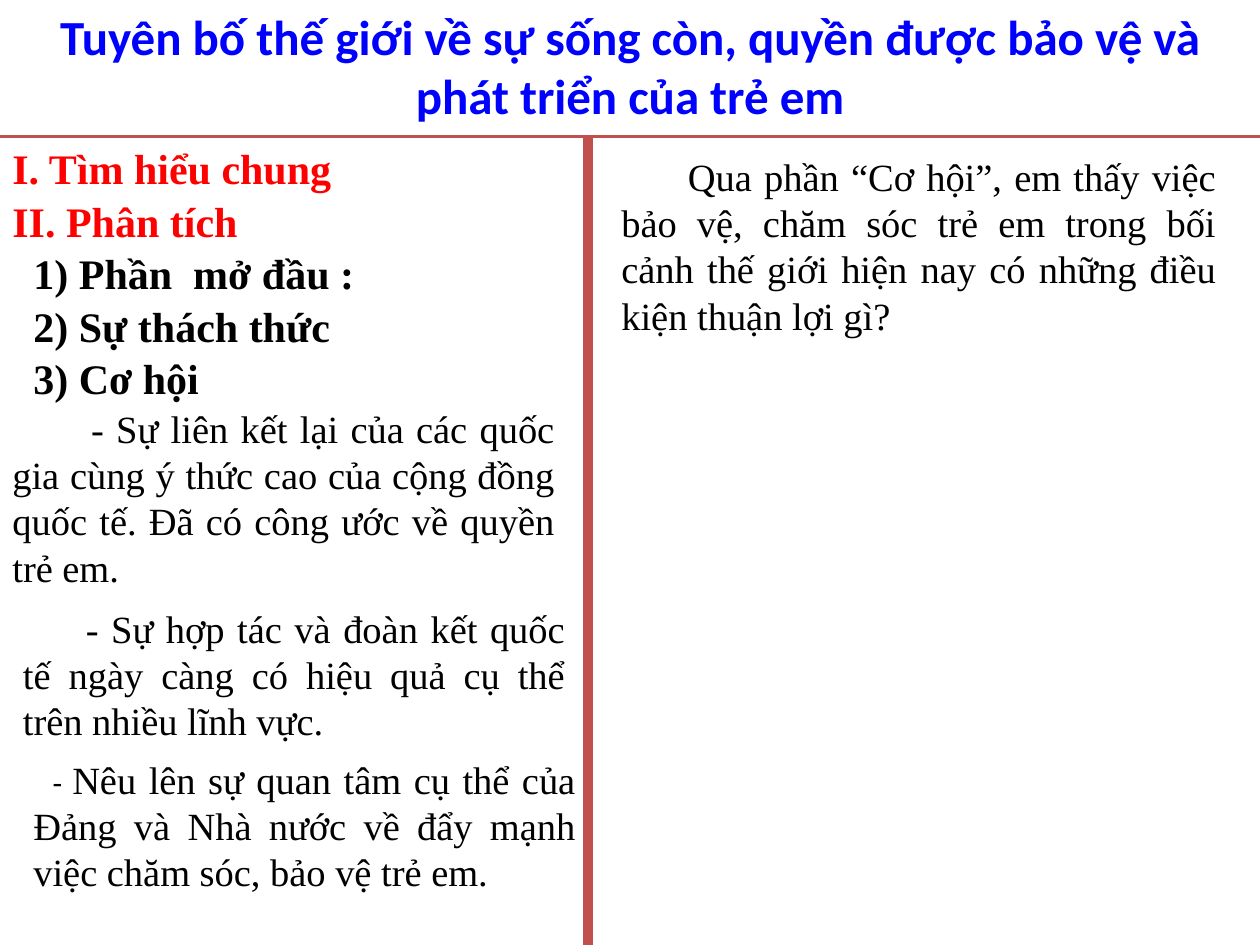
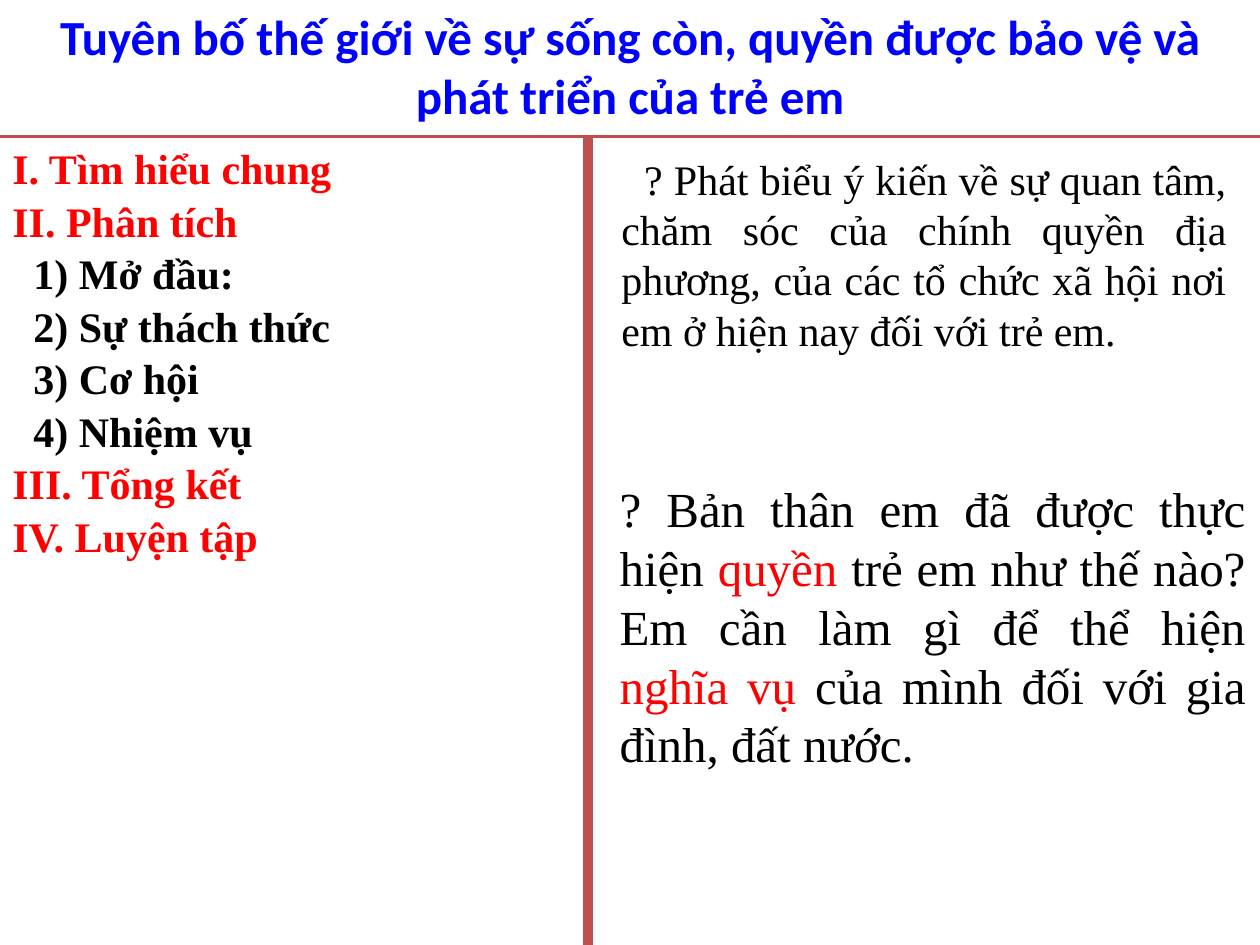
"""Build two lesson slides on the world declaration about children's rights."""
from lxml import etree
from pptx import Presentation
from pptx.dml.color import RGBColor
from pptx.enum.shapes import MSO_CONNECTOR
from pptx.enum.text import MSO_ANCHOR, MSO_AUTO_SIZE, PP_ALIGN
from pptx.oxml.ns import qn
from pptx.util import Pt

STRAIGHT = MSO_CONNECTOR.STRAIGHT
TOP = MSO_ANCHOR.TOP
NO_FIT, GROW = MSO_AUTO_SIZE.NONE, MSO_AUTO_SIZE.SHAPE_TO_FIT_TEXT
LEFT, CENTER, JUSTIFY = PP_ALIGN.LEFT, PP_ALIGN.CENTER, PP_ALIGN.JUSTIFY

COLORS = {"title": "0000FF", "rule": "C0504D", "heading": "FF0000", "text": "000000"}
TITLE_FONT, BODY_FONT = "Calibri", "Times New Roman"
WIDTH, HEIGHT = 720, 540
RULE_Y, DIVIDER_X = 78, 336
OUTLINE_STEP = 30
TITLE = "Tuyên bố thế giới về sự sống còn, quyền được bảo vệ và phát triển của trẻ em"


def add_run(p, text, size, color="text", font=BODY_FONT, bold=False):
    """Append one formatted run to a paragraph."""
    r = p.add_run()
    r.text = text
    r.font.name = font
    r.font.size = Pt(size)
    r.font.bold = bold
    r.font.color.rgb = RGBColor.from_string(COLORS[color])


def add_box(s, x, y, w, h, align=JUSTIFY, indent=0):
    """Add a wrapping text box and return its first paragraph."""
    tf = s.shapes.add_textbox(Pt(x), Pt(y), Pt(w), Pt(h)).text_frame
    tf.word_wrap = True
    tf.auto_size = GROW
    p = tf.paragraphs[0]
    p.alignment = align
    if indent:
        p._p.get_or_add_pPr().set("indent", str(Pt(indent)))
    return p


def add_passage(s, x, y, w, h, text, size=22, indent=0):
    """Add a justified passage with a first-line indent."""
    p = add_box(s, x, y, w, h, indent=indent)
    add_run(p, text, size)


def add_rule(s, x1, y1, x2, y2, weight):
    """Draw a straight rule without a shadow."""
    line = s.shapes.add_connector(STRAIGHT, Pt(x1), Pt(y1), Pt(x2), Pt(y2))
    line.line.color.rgb = RGBColor.from_string(COLORS["rule"])
    line.line.width = Pt(weight)
    etree.SubElement(line._element.spPr, qn("a:effectLst"))


def add_title(s):
    """Place and format the title placeholder."""
    sp = s.shapes.title
    sp.left, sp.top, sp.width, sp.height = Pt(0), Pt(0), Pt(WIDTH), Pt(72)
    tf = sp.text_frame
    tf.word_wrap = True
    tf.auto_size = NO_FIT
    tf.vertical_anchor = TOP
    p = tf.paragraphs[0]
    p.alignment = CENTER
    add_run(p, TITLE, 28, "title", TITLE_FONT, True)


def add_outline(s, items):
    """Stack the outline of (level, text) items down the left column."""
    for i, (level, text) in enumerate(items):
        p = add_box(s, 12 * level, RULE_Y + OUTLINE_STEP * i, 300, 36, LEFT)
        add_run(p, text, 24, "text" if level else "heading", bold=True)


def add_lesson_slide(prs, outline):
    """Add a slide with the shared title, rules and outline."""
    s = prs.slides.add_slide(prs.slide_layouts[5])
    add_rule(s, 0, RULE_Y, WIDTH, RULE_Y, 2.25)
    add_rule(s, DIVIDER_X, RULE_Y, DIVIDER_X, HEIGHT, 6)
    add_title(s)
    add_outline(s, outline)
    return s


def build_opportunity(prs):
    """Build the slide on opportunities."""
    s = add_lesson_slide(prs, [
        (0, "I. Tìm hiểu chung"),
        (0, "II. Phân tích"),
        (1, "1) Phần  mở đầu :"),
        (1, "2) Sự thách thức"),
        (1, "3) Cơ hội"),
    ])
    add_passage(s, 348, 84, 354, 114,
                "Qua phần “Cơ hội”, em thấy việc bảo vệ, chăm sóc trẻ em trong bối cảnh "
                "thế giới hiện nay có những điều kiện thuận lợi gì?", indent=38)
    add_passage(s, 0, 228, 324, 114,
                "- Sự liên kết lại của các quốc gia cùng ý thức cao của cộng đồng quốc tế. "
                "Đã có công ước về quyền trẻ em.", indent=45)
    add_passage(s, 6, 342, 324, 87,
                "- Sự hợp tác và đoàn kết quốc tế ngày càng có hiệu quả cụ thể "
                "trên nhiều lĩnh vực.", indent=36)
    p = add_box(s, 12, 428.5, 324, 87, indent=11)
    add_run(p, "- ", 18, font=TITLE_FONT)
    add_run(p, "Nêu lên sự quan tâm cụ thể của Đảng và Nhà nước về đẩy mạnh "
               "việc chăm sóc, bảo vệ trẻ em.", 22)


def build_practice(prs):
    """Build the slide with the practice questions."""
    s = add_lesson_slide(prs, [
        (0, "I. Tìm hiểu chung"),
        (0, "II. Phân tích"),
        (1, "1) Mở đầu:"),
        (1, "2) Sự thách thức"),
        (1, "3) Cơ hội"),
        (1, "4) Nhiệm vụ"),
        (0, "III. Tổng kết"),
        (0, "IV. Luyện tập"),
    ])
    add_passage(s, 348, 84, 360, 124,
                "? Phát biểu ý kiến về sự quan tâm, chăm sóc của chính quyền địa phương, "
                "của các tổ chức xã hội nơi em ở hiện nay đối với trẻ em.", 24, 13)
    p = add_box(s, 347, 270, 372, 177)
    for text, color in [
        ("? Bản thân em đã được thực hiện ", "text"),
        ("quyền ", "heading"),
        ("trẻ em như thế nào? Em cần làm gì để thể hiện ", "text"),
        ("nghĩa vụ ", "heading"),
        ("của mình đối với gia đình, đất nước.", "text"),
    ]:
        add_run(p, text, 28, color)


def main():
    """Build and save the presentation."""
    prs = Presentation()
    prs.slide_width, prs.slide_height = Pt(WIDTH), Pt(HEIGHT)
    build_opportunity(prs)
    build_practice(prs)
    prs.save("out.pptx")


if __name__ == "__main__":
    main()
